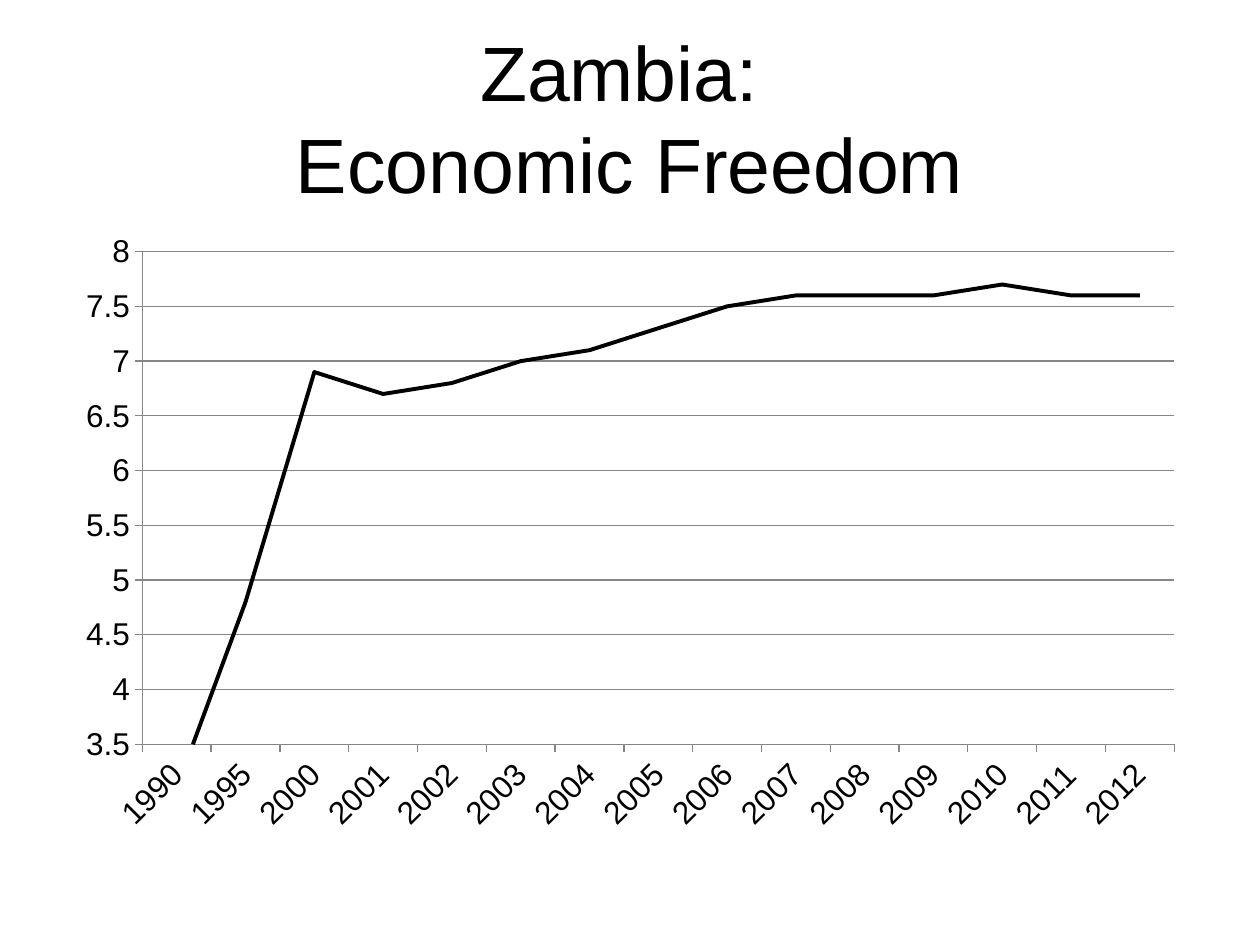
from dataclasses import dataclass

from lxml import etree
from pptx import Presentation
from pptx.chart.data import CategoryChartData
from pptx.dml.color import RGBColor
from pptx.enum import chart as charts, text
from pptx.oxml import ns
from pptx.util import Pt


@dataclass(frozen=True)
class Theme:
    font: str = "Arial"
    ink: RGBColor = RGBColor(0, 0, 0)
    rule: RGBColor = RGBColor(0x87, 0x87, 0x87)
    title_size: int = 44
    label_size: int = 18


class SlideBuilder:
    def __init__(self, slide, theme):
        self.slide = slide
        self.theme = theme

    def style_font(self, font, size):
        font.name = self.theme.font
        font.size = Pt(size)
        font.bold = False
        font.color.rgb = self.theme.ink

    def title(self, lines, left, top, width, height):
        shape = self.slide.shapes.title
        shape.left, shape.top = Pt(left), Pt(top)
        shape.width, shape.height = Pt(width), Pt(height)
        frame = shape.text_frame
        frame.auto_size = text.MSO_AUTO_SIZE.NONE
        frame.vertical_anchor = text.MSO_ANCHOR.MIDDLE
        paragraph = frame.paragraphs[0]
        paragraph.alignment = text.PP_ALIGN.CENTER
        for index, line in enumerate(lines):
            if index:
                paragraph.add_line_break()
            run = paragraph.add_run()
            run.text = line
            self.style_font(run.font, self.theme.title_size)

    def style_line(self, line, color, width):
        line.color.rgb = color
        line.width = Pt(width)

    def place_plot(self, chart, **fractions):
        plot_area = chart.plots[0]._element.getparent()
        for layout in plot_area.findall(ns.qn("c:layout")):
            plot_area.remove(layout)
        layout = etree.Element(ns.qn("c:layout"))
        plot_area.insert(0, layout)
        manual = etree.SubElement(layout, ns.qn("c:manualLayout"))
        settings = {"layoutTarget": "inner", "xMode": "edge", "yMode": "edge", **fractions}
        for name, value in settings.items():
            etree.SubElement(manual, ns.qn(f"c:{name}")).set("val", str(value))

    def line_chart(self, values, left, top, width, height):
        data = CategoryChartData()
        data.categories = list(values)
        data.add_series("Series 1", list(values.values()))
        chart = self.slide.shapes.add_chart(
            charts.XL_CHART_TYPE.LINE, Pt(left), Pt(top), Pt(width), Pt(height), data
        ).chart
        chart.has_legend = False
        chart.has_title = False
        self.style_font(chart.font, self.theme.label_size)
        chart.plots[0].vary_by_categories = False
        series = chart.plots[0].series[0]
        series.smooth = False
        self.style_line(series.format.line, self.theme.ink, 2.25)

        for axis in (chart.category_axis, chart.value_axis):
            axis.major_tick_mark = charts.XL_TICK_MARK.OUTSIDE
            axis.minor_tick_mark = charts.XL_TICK_MARK.NONE
            self.style_line(axis.format.line, self.theme.rule, 0.75)
            self.style_font(axis.tick_labels.font, self.theme.label_size)

        labels = chart.category_axis._element.find(ns.qn("c:txPr"))
        labels.find(ns.qn("a:bodyPr")).set("rot", "-2700000")

        axis = chart.value_axis
        axis.minimum_scale, axis.maximum_scale, axis.major_unit = 3.5, 8, 0.5
        axis.has_major_gridlines = True
        self.style_line(axis.major_gridlines.format.line, self.theme.rule, 0.75)
        axis.tick_labels.number_format = "General"
        axis.tick_labels.number_format_is_linked = False
        self.place_plot(chart, x=0.07, y=0.05, w=0.91, h=0.79)


def main():
    presentation = Presentation()
    presentation.slide_width, presentation.slide_height = Pt(720), Pt(540)
    slide = presentation.slides.add_slide(presentation.slide_layouts[5])
    builder = SlideBuilder(slide, Theme())
    builder.title(["Zambia: ", "Economic Freedom"], 36, 21.6, 648, 90)

    years = ["1990", "1995", *map(str, range(2000, 2013))]
    scores = [3.1, 4.8, 6.9, 6.7, 6.8, 7, 7.1, 7.3, 7.5, 7.6, 7.6, 7.6, 7.7, 7.6, 7.6]
    builder.line_chart(dict(zip(years, scores)), 36, 126, 648, 356.4)
    presentation.save("out.pptx")


if __name__ == "__main__":
    main()
